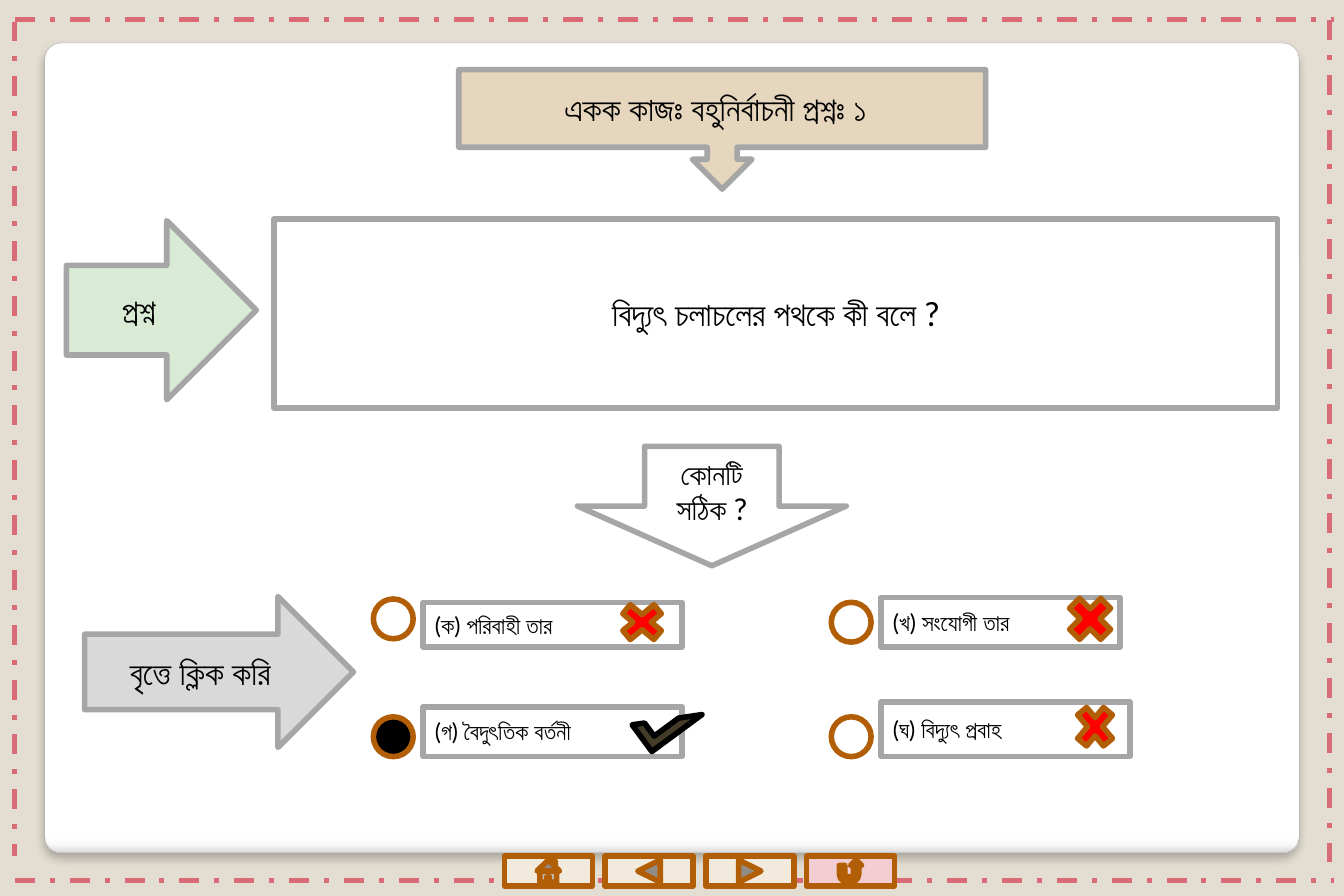
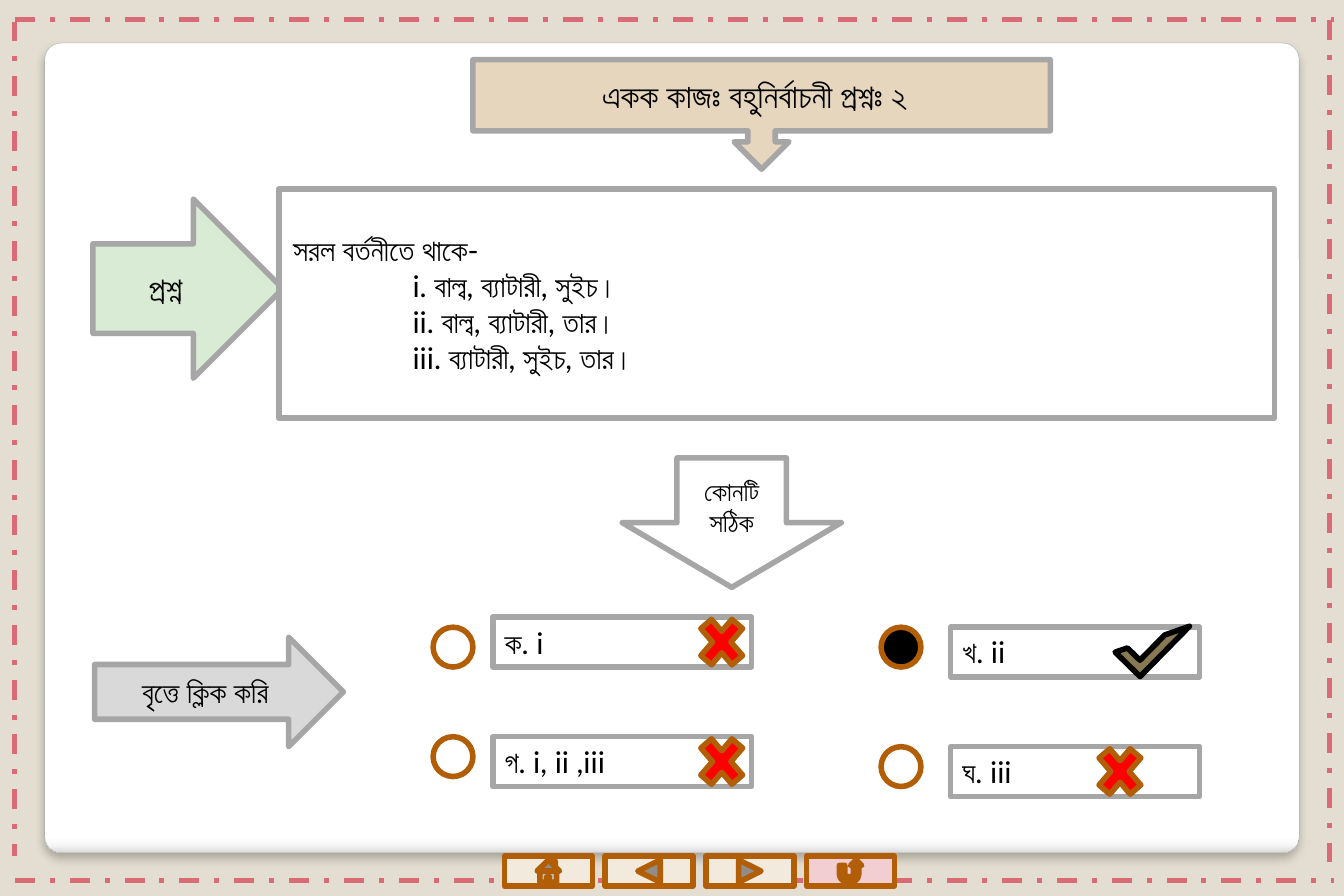
from dataclasses import dataclass

from lxml import etree
from pptx import Presentation
from pptx.dml.color import RGBColor
from pptx.enum.dml import MSO_LINE
from pptx.enum.shapes import MSO_CONNECTOR, MSO_SHAPE
from pptx.enum.text import MSO_ANCHOR, MSO_AUTO_SIZE, PP_ALIGN
from pptx.oxml.ns import qn
from pptx.util import Pt

LEFT, CENTER = PP_ALIGN.LEFT, PP_ALIGN.CENTER
RECTANGLE, ELLIPSE = MSO_SHAPE.RECTANGLE, MSO_SHAPE.OVAL
DOWN_ARROW, RIGHT_ARROW = MSO_SHAPE.DOWN_ARROW, MSO_SHAPE.RIGHT_ARROW
CROSS, TICK = MSO_SHAPE.MATH_MULTIPLY, MSO_SHAPE.HALF_FRAME


@dataclass(frozen=True)
class Theme:
    font: str = "Lato"
    background: str = "E3DED1"
    white: str = "FFFFFF"
    black: str = "000000"
    outline: str = "A6A6A6"
    accent: str = "B25E07"
    border: str = "D96B77"
    panel_line: str = "A4A4A4"
    heading: str = "E6D6BD"
    label: str = "D9EAD5"
    click: str = "D9D9D9"
    wrong: str = "FF0000"
    button: str = "F3EADE"
    return_button: str = "F2CED2"
    line_width: float = 3.35
    border_width: float = 3
    large: float = 20
    medium: float = 18
    small: float = 16
    tiny: float = 14


THEME = Theme()

# Content: boxes are (left, top, width, height) in points
QUESTIONS = [
    {
        "title": ("একক কাজঃ বহুনির্বাচনী প্রশ্নঃ ১", (276.5, 42, 317.5, 72)),
        "question": ([("বিদ্যুৎ চলাচলের পথকে কী বলে ?", 0)], (165, 132, 605, 114)),
        "question_style": (THEME.large, CENTER),
        "label_box": (40, 133, 114.5, 108),
        "prompt": ("কোনটি সঠিক ?", (348, 269, 162, 72), THEME.medium),
        "click": ((51, 359.5, 162, 91), THEME.large),
        "option_size": THEME.tiny,
        "tick": (233.6, "443C29"),
        # text, box, circle position, mark, mark box
        "options": [
            ("(ক) পরিবাহী তার", (255, 363, 156, 27), (225, 361), CROSS, (369, 360, 36, 30)),
            ("(খ) সংযোগী তার", (531, 360, 144, 30), (501, 363), CROSS, (639, 355, 36, 36)),
            ("(গ) বৈদুৎতিক বর্তনী", (255, 426, 156, 30), (225, 432), TICK, (392, 415, 20, 37.5)),
            ("(ঘ) বিদ্যুৎ প্রবাহ", (531, 423, 150, 33), (501, 432), CROSS, (645, 420, 30, 36)),
        ],
    },
    {
        "title": ("একক কাজঃ বহুনির্বাচনী প্রশ্নঃ ২", (285, 36, 348, 66)),
        "question": (
            [
                ("সরল বর্তনীতে থাকে-", 0),
                ("i. বাল্ব, ব্যাটারী, সুইচ।", 72),
                ("ii. বাল্ব, ব্যাটারী, তার।", 72),
                ("iii. ব্যাটারী, সুইচ, তার।", 72),
            ],
            (168, 114, 600, 138),
        ),
        "question_style": (THEME.medium, LEFT),
        "label_box": (56, 120, 114.5, 108),
        "prompt": ("কোনটি সঠিক", (375, 276, 132, 78), THEME.small),
        "click": ((57, 384, 150, 66), THEME.medium),
        "option_size": THEME.medium,
        "tick": (224.5, "887952"),
        "options": [
            ("ক. i", (297, 372, 156, 30), (261, 378), CROSS, (417, 366, 36, 42)),
            ("খ. ii", (573, 378, 150, 30), (531, 378), TICK, (684, 364, 21, 42.5)),
            ("গ. i, ii ,iii", (297, 444, 156, 30), (261, 444), CROSS, (417, 438, 36, 42)),
            ("ঘ. iii", (573, 450, 150, 30), (531, 450), CROSS, (657, 444, 36, 42)),
        ],
    },
]
LABEL, CLICK = "প্রশ্ন", "বৃত্তে ক্লিক করি"

# Shared frame
PANEL_BOX = (27, 26, 756, 488)
PANEL_STOPS = [(0, "FFFFFF"), (98, "FFFFFF"), (99, "F7F7F7"), (100, "DADADA")]
BORDER_LINES = [
    (9, 12, 804, 12),
    (801, 12, 801, 521),
    (9, 13, 9, 516),
    (9, 530.5, 804, 530.5),
]
BUTTONS = [
    (MSO_SHAPE.ACTION_BUTTON_HOME, THEME.button),
    (MSO_SHAPE.ACTION_BUTTON_BACK_OR_PREVIOUS, THEME.button),
    (MSO_SHAPE.ACTION_BUTTON_FORWARD_OR_NEXT, THEME.button),
    (MSO_SHAPE.ACTION_BUTTON_RETURN, THEME.return_button),
]
BUTTON_LEFT, BUTTON_TOP, BUTTON_STEP = 304, 516, 60.7
BUTTON_WIDTH, BUTTON_HEIGHT = 53, 18
CIRCLE = 24
TITLE_SHARE, TITLE_SHIFT = 0.65, 4
WIDE_INSETS = (8.64, 4.32)


def color(value):
    return RGBColor.from_string(value)


def paint(shape, fill, line, width=THEME.line_width):
    shape.fill.solid()
    shape.fill.fore_color.rgb = color(fill)
    shape.line.color.rgb = color(line)
    shape.line.width = Pt(width)


def place(shape, box):
    shape.left, shape.top, shape.width, shape.height = map(Pt, box)


def write(shape, lines, size, align=CENTER, insets=(7.2, 3.6)):
    frame = shape.text_frame
    frame.word_wrap = True
    frame.auto_size = MSO_AUTO_SIZE.NONE
    frame.vertical_anchor = MSO_ANCHOR.MIDDLE
    frame.margin_left = frame.margin_right = Pt(insets[0])
    frame.margin_top = frame.margin_bottom = Pt(insets[1])
    for index, (text, indent) in enumerate(lines):
        paragraph = frame.paragraphs[0] if index == 0 else frame.add_paragraph()
        paragraph.alignment = align
        paragraph.space_before = Pt(0)
        properties = paragraph._p.get_or_add_pPr()
        properties.set("marL", str(Pt(indent)))
        properties.set("indent", "0")
        etree.SubElement(properties, qn("a:buNone"))
        run = paragraph.add_run()
        run.text = text
        run.font.name = THEME.font
        run.font.size = Pt(size)
        run.font.color.rgb = color(THEME.black)


def add_shape(slide, kind, box, fill, line=THEME.outline):
    shape = slide.shapes.add_shape(kind, *map(Pt, box))
    shape.shadow.inherit = False
    paint(shape, fill, line)
    return shape


def bring_to_front(slide, shape):
    slide.shapes.element.append(shape.element)


def add_color(parent, value):
    return etree.SubElement(parent, qn("a:srgbClr"), val=value)


def add_panel(slide):
    panel = add_shape(slide, MSO_SHAPE.ROUNDED_RECTANGLE, PANEL_BOX, THEME.white, THEME.panel_line)
    panel.adjustments[0] = 0.02
    panel.line.width = Pt(0.16)
    panel.fill.gradient()
    panel.fill.gradient_angle = 270
    properties = panel.element.spPr
    stops = properties.find(".//" + qn("a:gsLst"))
    for stop in list(stops):
        stops.remove(stop)
    for position, value in PANEL_STOPS:
        add_color(etree.SubElement(stops, qn("a:gs"), pos=str(position * 1000)), value)
    shadow = etree.SubElement(
        properties.find(qn("a:effectLst")), qn("a:outerShdw"),
        blurRad=str(Pt(6)), dist=str(Pt(4)), dir="5400000", rotWithShape="0",
    )
    etree.SubElement(add_color(shadow, THEME.black), qn("a:alpha"), val="25000")
    return panel


def add_border_line(slide, ends):
    line = slide.shapes.add_connector(MSO_CONNECTOR.STRAIGHT, *map(Pt, ends))
    line.line.color.rgb = color(THEME.border)
    line.line.width = Pt(THEME.border_width)
    line.line.dash_style = MSO_LINE.DASH_DOT
    etree.SubElement(line.element.spPr, qn("a:effectLst"))
    return line


def move_frame_to_layout(slide, layout):
    """Draw the panel, border and buttons, then hand them to the layout."""
    parts = [add_panel(slide)]
    parts += [add_border_line(slide, ends) for ends in BORDER_LINES]
    for index, (kind, fill) in enumerate(BUTTONS):
        box = (BUTTON_LEFT + index * BUTTON_STEP, BUTTON_TOP, BUTTON_WIDTH, BUTTON_HEIGHT)
        parts.append(add_shape(slide, kind, box, fill, THEME.accent))
    for part in parts:
        layout.shapes.element.append(part.element)


def add_option(slide, option, size, tick):
    text, box, position, mark, mark_box = option
    correct = mark == TICK
    answer = add_shape(slide, RECTANGLE, box, THEME.white)
    write(answer, [(text, 0)], size, LEFT)
    circle_fill = THEME.black if correct else THEME.white
    add_shape(slide, ELLIPSE, (*position, CIRCLE, CIRCLE), circle_fill, THEME.accent)
    if correct:
        angle, fill = tick
        add_shape(slide, mark, mark_box, fill, THEME.black).rotation = angle
    else:
        add_shape(slide, mark, mark_box, THEME.wrong, THEME.accent)


def fill_slide(slide, content):
    # Heading: the title lies on the body of the callout
    text, box = content["title"]
    add_shape(slide, MSO_SHAPE.DOWN_ARROW_CALLOUT, box, THEME.heading)
    title = slide.shapes.title
    left, top, width, height = box
    place(title, (left - TITLE_SHIFT, top, width, height * TITLE_SHARE))
    write(title, [(text, 0)], THEME.large)
    bring_to_front(slide, title)

    # Label arrow and question
    label = add_shape(slide, RIGHT_ARROW, content["label_box"], THEME.label)
    write(label, [(LABEL, 0)], THEME.large, insets=WIDE_INSETS)
    lines, box = content["question"]
    question = slide.placeholders[1]
    place(question, box)
    paint(question, THEME.white, THEME.outline)
    write(question, lines, *content["question_style"], WIDE_INSETS)
    bring_to_front(slide, question)

    # Prompt arrows
    text, box, size = content["prompt"]
    write(add_shape(slide, DOWN_ARROW, box, THEME.white), [(text, 0)], size)
    box, size = content["click"]
    write(add_shape(slide, RIGHT_ARROW, box, THEME.click), [(CLICK, 0)], size)

    # Answers
    for option in content["options"]:
        add_option(slide, option, content["option_size"], content["tick"])


def main():
    presentation = Presentation()
    presentation.slide_width, presentation.slide_height = Pt(810), Pt(540)
    background = presentation.slide_master.background.fill
    background.solid()
    background.fore_color.rgb = color(THEME.background)
    layout = presentation.slide_layouts[1]
    slides = [presentation.slides.add_slide(layout) for _ in QUESTIONS]
    move_frame_to_layout(slides[0], layout)
    for slide, content in zip(slides, QUESTIONS):
        fill_slide(slide, content)
    presentation.save("out.pptx")


if __name__ == "__main__":
    main()
